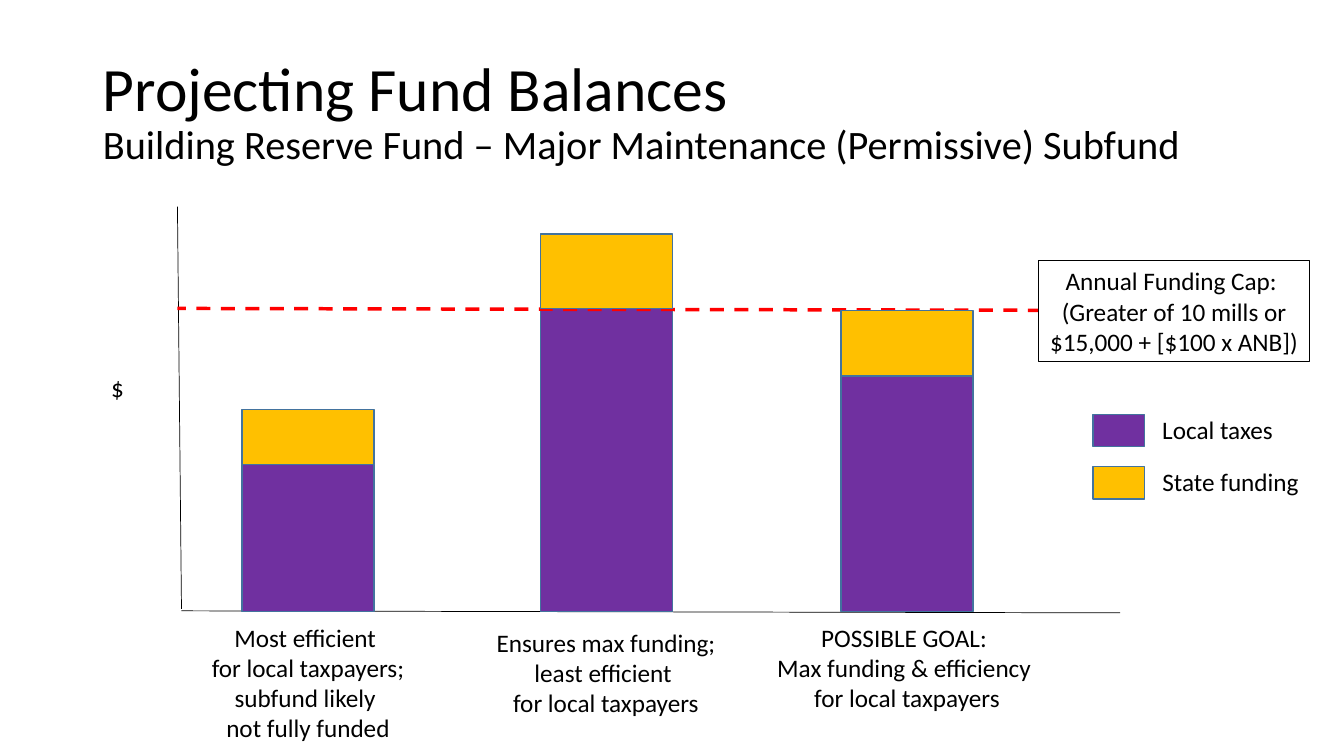
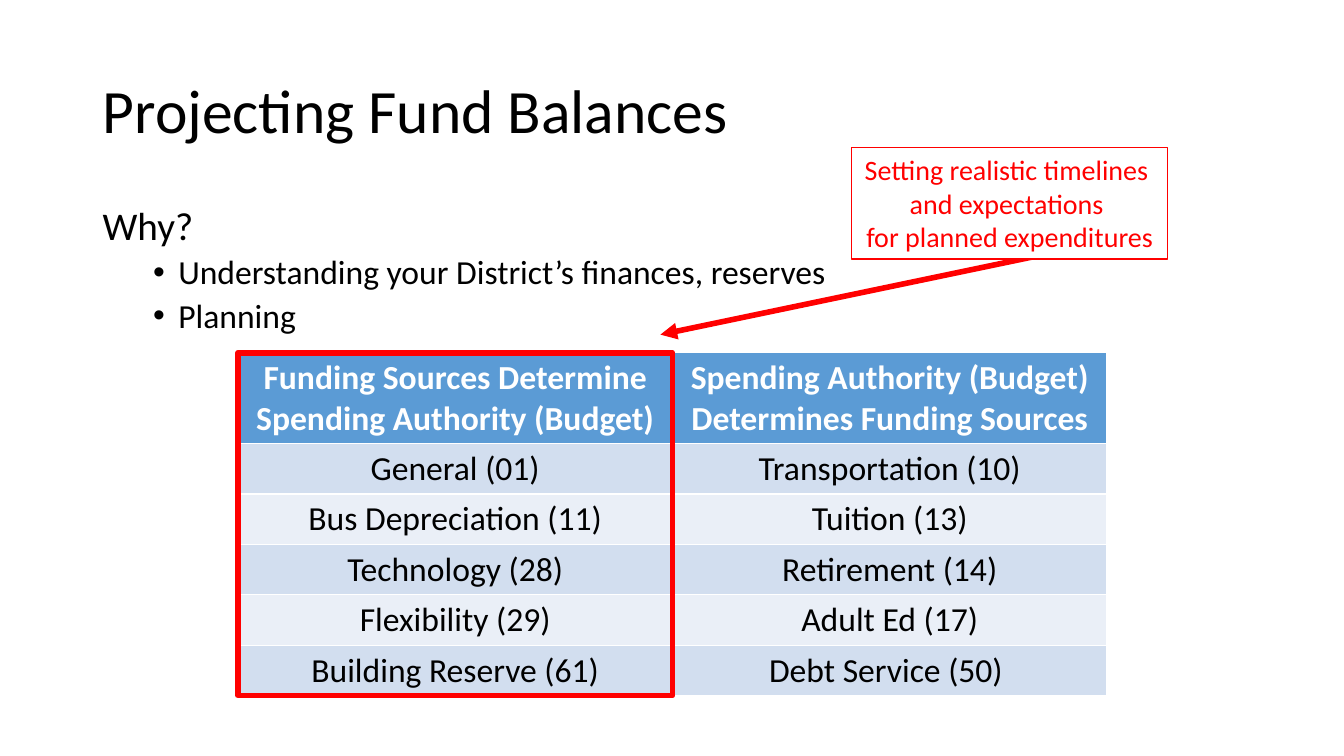
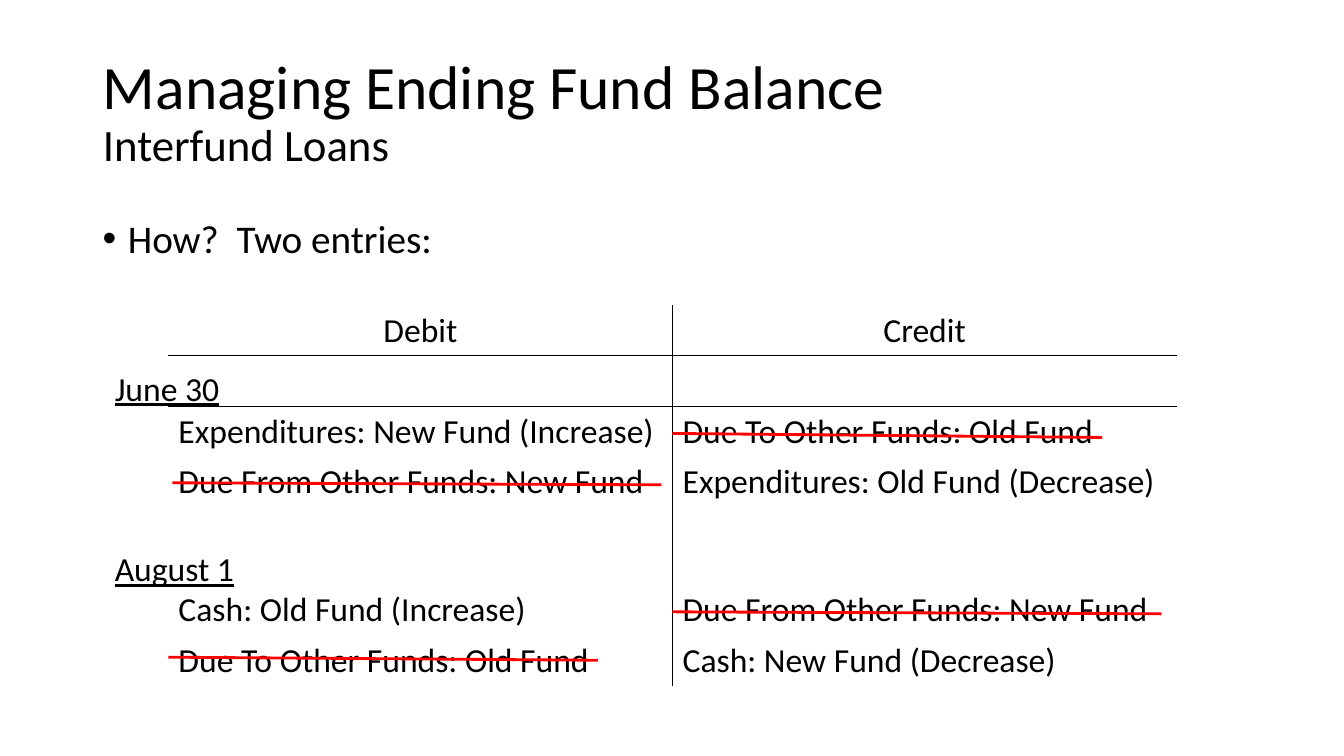
from pptx import Presentation
from pptx.dml.color import RGBColor
from pptx.enum.dml import MSO_LINE
from pptx.enum.shapes import MSO_CONNECTOR, MSO_SHAPE
from pptx.enum.text import MSO_ANCHOR, MSO_AUTO_SIZE, PP_ALIGN
from pptx.oxml.ns import qn
from pptx.util import Inches, Pt
from lxml.etree import SubElement

FONT = "Calibri"
BLACK = RGBColor(0x00, 0x00, 0x00)
WHITE = RGBColor(0xFF, 0xFF, 0xFF)
RED = RGBColor(0xFF, 0x00, 0x00)
PURPLE = RGBColor(0x70, 0x30, 0xA0)
GOLD = RGBColor(0xFF, 0xC0, 0x00)
BAR_EDGE = RGBColor(0x43, 0x73, 0x9E)
HEADER_BLUE = RGBColor(0x5B, 0x9B, 0xD5)
DARK_BAND = RGBColor(0xD2, 0xDE, 0xEF)
LIGHT_BAND = RGBColor(0xEA, 0xEF, 0xF7)
PLAIN_TABLE_STYLE = "{2D5ABB26-0587-4C30-8999-92F81FD0307C}"


def add_box(slide, box, lines=(), size=18, color=BLACK, align=PP_ALIGN.CENTER,
            fill=None, edge=None, edge_width=1):
    """Add a rectangle, or a text box when it has neither fill nor edge."""
    bounds = [Inches(length) for length in box]
    if fill is None and edge is None:
        shape = slide.shapes.add_textbox(*bounds)
    else:
        shape = slide.shapes.add_shape(MSO_SHAPE.RECTANGLE, *bounds)
        shape.shadow.inherit = False
        if fill is None:
            shape.fill.background()
        else:
            shape.fill.solid()
            shape.fill.fore_color.rgb = fill
        shape.line.color.rgb = edge
        shape.line.width = Pt(edge_width)
    frame = shape.text_frame
    if lines:
        frame.word_wrap = False
        frame.auto_size = MSO_AUTO_SIZE.SHAPE_TO_FIT_TEXT
    for index, line in enumerate(lines):
        paragraph = frame.add_paragraph() if index else frame.paragraphs[0]
        paragraph.alignment = align
        run = paragraph.add_run()
        run.text = line
        run.font.name, run.font.size = FONT, Pt(size)
        run.font.color.rgb = color
    return shape


def add_line(slide, start, end, color, width):
    points = [Inches(length) for length in (*start, *end)]
    connector = slide.shapes.add_connector(MSO_CONNECTOR.STRAIGHT, *points)
    connector.line.color.rgb = color
    connector.line.width = Pt(width)
    SubElement(connector._element.spPr, qn("a:effectLst"))
    return connector


presentation = Presentation()
presentation.slide_width = Inches(13.33)
presentation.slide_height = Inches(7.5)
title_only = presentation.slide_layouts[5]

# Titles: one line of (text, size) after another
titles = [
    [("Projecting Fund Balances", 44),
     ("Building Reserve Fund – Major Maintenance (Permissive) Subfund", 28.8)],
    [("Projecting Fund Balances", 44)],
    [("Managing Ending Fund Balance", 44), ("Interfund Loans", 32)],
]
slides = []
for title_lines in titles:
    slide = presentation.slides.add_slide(title_only)
    slides.append(slide)
    title = slide.shapes.title
    title.left, title.top = Inches(0.92), Inches(0.4)
    title.width, title.height = Inches(11.5), Inches(1.45)
    title.text_frame.auto_size = MSO_AUTO_SIZE.NONE
    title.text_frame.vertical_anchor = MSO_ANCHOR.MIDDLE
    paragraph = title.text_frame.paragraphs[0]
    paragraph.alignment = PP_ALIGN.LEFT
    paragraph.line_spacing = 0.9
    for index, (text, size) in enumerate(title_lines):
        if index:
            paragraph.add_line_break()
        run = paragraph.add_run()
        run.text = text
        run.font.name, run.font.size = FONT, Pt(size)
        run.font.color.rgb = BLACK
bars_slide, why_slide, loans_slide = slides

# Body text: (text, size, space before, left margin of a bulleted line)
bodies = [
    (why_slide, 2, 4.76, [
        ("Why?", 28, 10, None),
        ("Understanding your District’s finances, reserves", 24, 5, 0.75),
        ("Planning", 24, 5, 0.75)]),
    (loans_slide, 2.13, 4.63, [("How?  Two entries:", 28, 10, 0.25)]),
]
for slide, top, height, body_lines in bodies:
    body = slide.shapes.add_textbox(Inches(0.92), Inches(top), Inches(11.5), Inches(height))
    frame = body.text_frame
    frame.word_wrap = True
    for index, (text, size, space, margin) in enumerate(body_lines):
        paragraph = frame.add_paragraph() if index else frame.paragraphs[0]
        paragraph.line_spacing = 0.9
        paragraph.space_before = Pt(space)
        if margin:
            properties = paragraph._p.get_or_add_pPr()
            properties.set("marL", str(Inches(margin)))
            properties.set("indent", str(-Inches(0.25)))
            SubElement(properties, qn("a:buFont")).set("typeface", "Arial")
            SubElement(properties, qn("a:buChar")).set("char", "•")
        run = paragraph.add_run()
        run.text = text
        run.font.name, run.font.size = FONT, Pt(size)
        run.font.color.rgb = BLACK

# Slide 1: stacked bars against the funding cap
BASELINE = 6.07
BAR_WIDTH = 1.31
bars = [  # left, top of local taxes, top of state funding
    (2.4, 4.61, 4.06),
    (5.36, 3.06, 2.32),
    (8.34, 3.73, 3.08),
]
add_line(bars_slide, (1.76, 2.05), (1.8, 6.04), BLACK, 0.5)
add_line(bars_slide, (11.11, 6.08), (1.8, 6.06), BLACK, 0.5)
add_box(bars_slide, (1, 3.64, 0.33, 0.4), ["$"])
for left, local_top, state_top in bars:
    add_box(bars_slide, (left, local_top, BAR_WIDTH, BASELINE - local_top),
            fill=PURPLE, edge=BAR_EDGE)
cap_line = add_line(bars_slide, (11.06, 3.08), (1.76, 3.06), RED, 2.5)
cap_line.line.dash_style = MSO_LINE.DASH
for left, local_top, state_top in bars:
    add_box(bars_slide, (left, state_top, BAR_WIDTH, local_top - state_top),
            fill=GOLD, edge=BAR_EDGE)

legend = [("Local taxes", PURPLE, 1.31), ("State funding", GOLD, 1.57)]
for index, (label, color, width) in enumerate(legend):
    top = 4.06 + 0.52 * index
    add_box(bars_slide, (10.84, top + 0.05, 0.51, 0.32), fill=color, edge=BAR_EDGE)
    add_box(bars_slide, (11.42, top, width, 0.4), [label])

add_box(bars_slide, (10.3, 2.58, 2.69, 1.01),
        ["Annual Funding Cap: ", "(Greater of 10 mills or", "$15,000 + [$100 x ANB])"],
        fill=WHITE, edge=BLACK, edge_width=0.75)
captions = [
    ((1.99, 6.12, 2.13, 1.31),
     ["Most efficient ", "for local taxpayers;", "subfund likely ", "not fully funded"]),
    ((4.81, 6.17, 2.4, 1.01),
     ["Ensures max funding;", "least efficient ", "for local taxpayers"]),
    ((7.59, 6.12, 2.81, 1.01),
     ["POSSIBLE GOAL: ", "Max funding & efficiency ", "for local taxpayers"]),
]
for box, lines in captions:
    add_box(bars_slide, box, lines)

# Slide 2: funds by what drives them
fund_rows = [
    ("Funding Sources Determine Spending Authority (Budget)",
     "Spending Authority (Budget) Determines Funding Sources"),
    ("General (01)", "Transportation (10)"),
    ("Bus Depreciation (11)", "Tuition (13)"),
    ("Technology (28)", "Retirement (14)"),
    ("Flexibility (29)", "Adult Ed (17)"),
    ("Building Reserve (61)", "Debt Service (50) "),
]
fund_table = why_slide.shapes.add_table(
    len(fund_rows), 2, Inches(2.36), Inches(3.5), Inches(8.62), Inches(3.4)).table
for row_index, texts in enumerate(fund_rows):
    is_header = row_index == 0
    fund_table.rows[row_index].height = Inches(0.9 if is_header else 0.5)
    band = DARK_BAND if row_index % 2 else LIGHT_BAND
    for column_index, text in enumerate(texts):
        cell = fund_table.cell(row_index, column_index)
        cell.fill.solid()
        cell.fill.fore_color.rgb = HEADER_BLUE if is_header else band
        paragraph = cell.text_frame.paragraphs[0]
        paragraph.alignment = PP_ALIGN.CENTER
        run = paragraph.add_run()
        run.text = text
        run.font.name, run.font.size = FONT, Pt(24)
        run.font.bold = is_header
        run.font.color.rgb = WHITE if is_header else BLACK

add_box(why_slide, (2.36, 3.5, 4.31, 3.4), edge=RED, edge_width=4)
arrow = add_line(why_slide, (11.1, 2.37), (6.55, 3.32), RED, 4)
SubElement(arrow.line._get_or_add_ln(), qn("a:tailEnd")).set("type", "triangle")
add_box(why_slide, (8.45, 1.46, 3.13, 1.11),
        ["Setting realistic timelines ", "and expectations ", "for planned expenditures"],
        size=20, color=RED, fill=WHITE, edge=RED, edge_width=0.75)

# Slide 3: ledger of the two loan entries
ledger_rows = [
    ("Debit", "Credit"),
    ("", ""),
    ("Expenditures: New Fund (Increase)", "Due To Other Funds: Old Fund"),
    ("Due From Other Funds: New Fund", "Expenditures: Old Fund (Decrease)"),
    ("", ""),
    ("Cash: Old Fund (Increase)", "Due From Other Funds: New Fund"),
    ("Due To Other Funds: Old Fund", "Cash: New Fund (Decrease)"),
]
GAP_ROW = 4
ledger = loans_slide.shapes.add_table(
    len(ledger_rows), 2, Inches(1.67), Inches(3.03), Inches(10), Inches(3.77)).table
ledger.first_row = ledger.horz_banding = False
ledger._tbl.tblPr.find(qn("a:tableStyleId")).text = PLAIN_TABLE_STYLE
for row_index, texts in enumerate(ledger_rows):
    ledger.rows[row_index].height = Inches(0.77 if row_index == GAP_ROW else 0.5)
    for column_index, text in enumerate(texts):
        cell = ledger.cell(row_index, column_index)
        cell.fill.background()
        if text:
            paragraph = cell.text_frame.paragraphs[0]
            paragraph.alignment = PP_ALIGN.LEFT if row_index else PP_ALIGN.CENTER
            run = paragraph.add_run()
            run.text = text
            run.font.name, run.font.size = FONT, Pt(24)
            run.font.color.rgb = BLACK
        sides = ["a:lnL" if column_index else "a:lnR"]
        if row_index < 2:
            sides.append("a:lnB")
        cell_properties = cell._tc.get_or_add_tcPr()
        for position, side in enumerate(sides):
            border = SubElement(cell_properties, qn(side), w=str(Pt(1)))
            border_fill = SubElement(border, qn("a:solidFill"))
            SubElement(border_fill, qn("a:srgbClr")).set("val", str(BLACK))
            cell_properties.insert(position, border)

strikes = [
    ((1.67, 6.52), (5.93, 6.55)),
    ((6.67, 4.3), (10.93, 4.34)),
    ((6.67, 6.07), (11.52, 6.09)),
    ((1.71, 4.79), (6.56, 4.81)),
]
for start, end in strikes:
    add_line(loans_slide, start, end, RED, 2)

for date, top, width in (("June 30", 3.6, 1.25), ("August 1", 5.39, 1.39)):
    label = add_box(loans_slide, (1.04, top, width, 0.5), [date], size=24,
                    align=PP_ALIGN.LEFT)
    label.text_frame.paragraphs[0].runs[0].font.underline = True

presentation.save("out.pptx")
